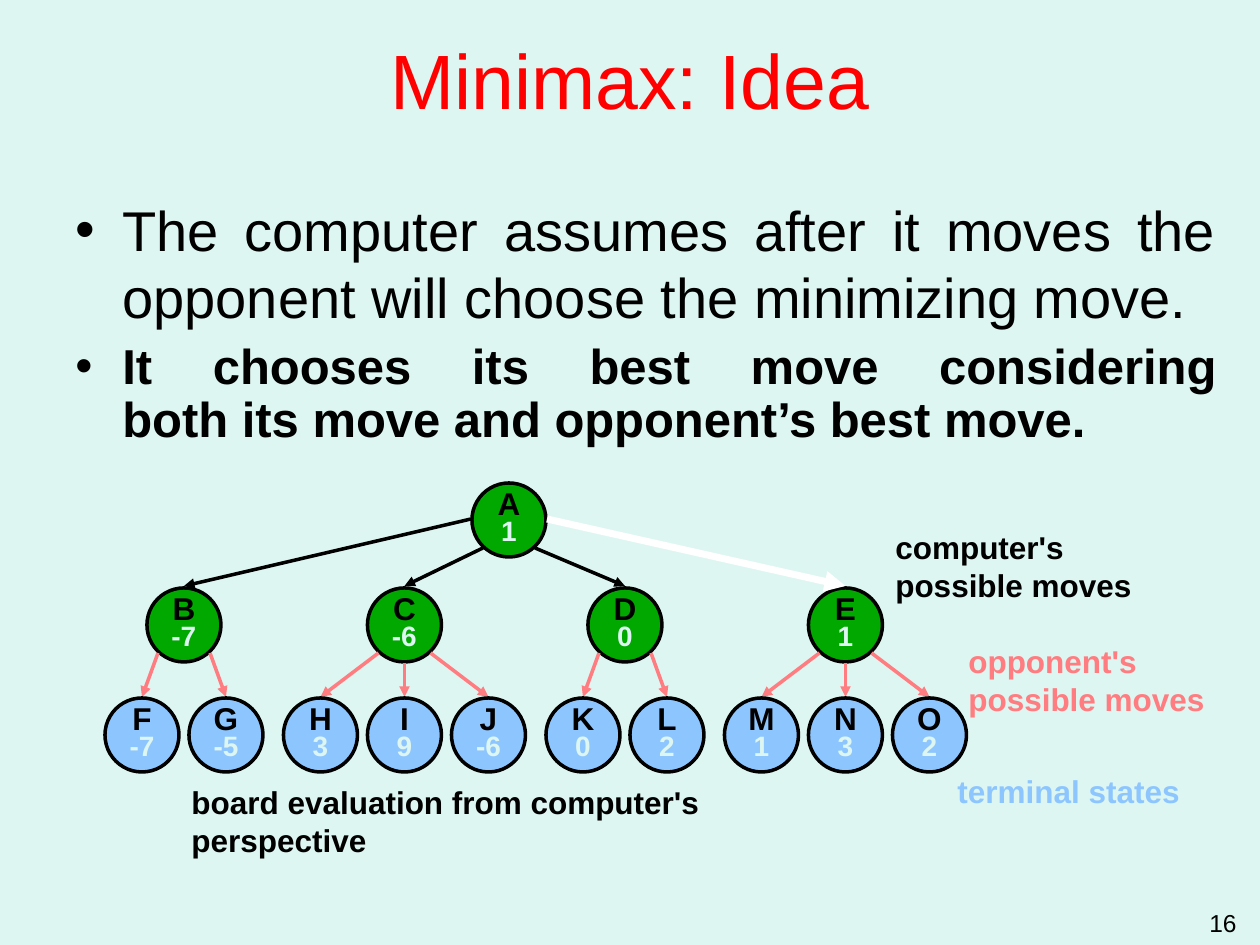
from dataclasses import dataclass

from lxml import etree
from pptx import Presentation
from pptx import util as u
from pptx.dml.color import RGBColor
from pptx.enum import shapes, text
from pptx.oxml.ns import qn

TITLE = "Minimax: Idea"
BULLETS = [
    ("The computer assumes after it moves the opponent will choose the minimizing move.",
     (63, 189, 1166, 126), 32, False, 1.0),
    ("It chooses its best move considering\nboth its move and opponent’s best move.",
     (63, 336, 1166, 136), 28, True, 0.9),
]
ROOT = ("A", "1")
TREE = [
    ("B", "-7", [("F", "-7"), ("G", "-5")]),
    ("C", "-6", [("H", "3"), ("I", "9"), ("J", "-6")]),
    ("D", "0", [("K", "0"), ("L", "2")]),
    ("E", "1", [("M", "1"), ("N", "3"), ("O", "2")]),
]
LABELS = [
    ("computer's\npossible moves", (883, 522, 262, 88), "ink"),
    ("opponent's\npossible moves", (956, 636, 262, 88), "opponent"),
    ("board evaluation from computer's perspective", (179, 777, 712, 88), "ink"),
    ("terminal states", (945, 766, 248, 50), "leaf"),
]
PAGE_NUMBER = "16"


@dataclass(frozen=True)
class Theme:
    font: str = "Arial"
    paper: str = "DEF6F1"
    ink: str = "000000"
    title: str = "FF0000"
    inner: str = "00A800"
    leaf: str = "8DC6FF"
    opponent: str = "FF7C80"
    best: str = "FFFFFF"
    title_size: int = 44
    label_size: int = 18
    value_size: int = 16
    number_size: int = 14


theme = Theme()
DIAMETER = 74
ROOT_X, ROOT_Y = 509, 483
INNER_X, INNER_Y, INNER_STEP = 184, 588, 220.5
LEAF_Y, LEAF_STEP = 698, 84
SIDE_X, SIDE_Y = 26, 65


def px(value):
    return u.Emu(round(value * 914400 / 126))


def color(value):
    return RGBColor.from_string(value)


def style(para, size, ink, bold=False, align=None, spacing=None):
    para.alignment = align
    para.line_spacing = spacing
    para.font.name = theme.font
    para.font.size = u.Pt(size)
    para.font.bold = bold
    para.font.color.rgb = color(ink)


def add_text(page, words, area):
    box = page.shapes.add_textbox(*map(px, area))
    box.text_frame.word_wrap = True
    para = box.text_frame.paragraphs[0]
    para.text = words
    return box, para


def add_bullet(page, words, area, size, bold, spacing):
    box, para = add_text(page, words, area)
    properties = para._p.get_or_add_pPr()
    properties.set("marL", str(px(47)))
    properties.set("indent", str(-px(47)))
    etree.SubElement(properties, qn("a:buFont"), typeface=theme.font)
    etree.SubElement(properties, qn("a:buChar"), char="•")
    style(para, size, theme.ink, bold, text.PP_ALIGN.JUSTIFY, spacing)


def add_node(page, name, value, center, top, fill):
    node = page.shapes.add_shape(shapes.MSO_SHAPE.OVAL, px(center - DIAMETER / 2),
                                 px(top), px(DIAMETER), px(DIAMETER))
    node.shadow.inherit = False
    node.fill.solid()
    node.fill.fore_color.rgb = color(fill)
    node.line.color.rgb = color(theme.ink)
    node.line.width = u.Pt(2)
    frame = node.text_frame
    frame.word_wrap = False
    frame.vertical_anchor = text.MSO_ANCHOR.MIDDLE
    frame.text = f"{name}\n{value}"
    looks = [(theme.label_size, theme.ink), (theme.value_size, theme.paper)]
    for para, (size, ink) in zip(frame.paragraphs, looks):
        style(para, size, ink, True, text.PP_ALIGN.CENTER, 0.75)


def add_arrow(page, start, end, ink, width=2):
    arrow = page.shapes.add_connector(shapes.MSO_CONNECTOR.STRAIGHT,
                                      *map(px, (*start, *end)))
    arrow.line.color.rgb = color(ink)
    arrow.line.width = u.Pt(width)
    etree.SubElement(arrow.line._get_or_add_ln(), qn("a:tailEnd"), type="triangle")
    etree.SubElement(arrow._element.spPr, qn("a:effectLst"))


def add_tree(page):
    middle = ROOT_Y + DIAMETER / 2
    starts = [(ROOT_X - 38, middle - 1), (ROOT_X - SIDE_X, ROOT_Y + SIDE_Y),
              (ROOT_X + SIDE_X, ROOT_Y + SIDE_Y), (ROOT_X + 38, middle - 1)]
    centers = [INNER_X + i * INNER_STEP for i in range(len(TREE))]
    moves = [(start, (center, INNER_Y - 2)) for start, center in zip(starts, centers)]
    *others, best = moves
    for start, end in others:
        add_arrow(page, start, end, theme.ink)
    add_node(page, *ROOT, ROOT_X, ROOT_Y, theme.inner)
    for center, (name, value, leaves) in zip(centers, TREE):
        add_node(page, name, value, center, INNER_Y, theme.inner)
        half = (len(leaves) - 1) / 2
        for i, leaf in enumerate(leaves):
            offset = i - half
            leaf_x = center + offset * LEAF_STEP
            start = (center + offset / half * SIDE_X,
                     INNER_Y + (SIDE_Y if offset else DIAMETER + 1))
            add_arrow(page, start, (leaf_x, LEAF_Y - 1), theme.opponent)
            add_node(page, *leaf, leaf_x, LEAF_Y, theme.leaf)
    add_arrow(page, *best, theme.best, 4)


def main():
    deck = Presentation()
    deck.slide_width, deck.slide_height = px(1260), px(945)
    page = deck.slides.add_slide(deck.slide_layouts[5])
    page.background.fill.solid()
    page.background.fill.fore_color.rgb = color(theme.paper)

    title = page.shapes.title
    title.left, title.top, title.width, title.height = map(px, (63, 0, 1134, 158))
    title.text_frame.text = TITLE
    title.text_frame.vertical_anchor = text.MSO_ANCHOR.MIDDLE
    style(title.text_frame.paragraphs[0], theme.title_size, theme.title,
          align=text.PP_ALIGN.CENTER)

    for bullet in BULLETS:
        add_bullet(page, *bullet)
    add_tree(page)
    for words, area, ink in LABELS:
        box, para = add_text(page, words, area)
        box.text_frame.auto_size = text.MSO_AUTO_SIZE.SHAPE_TO_FIT_TEXT
        style(para, theme.label_size, getattr(theme, ink), True)

    box, para = add_text(page, PAGE_NUMBER, (955, 902, 294, 32))
    style(para, theme.number_size, theme.ink, align=text.PP_ALIGN.RIGHT)
    deck.save("out.pptx")


if __name__ == "__main__":
    main()
